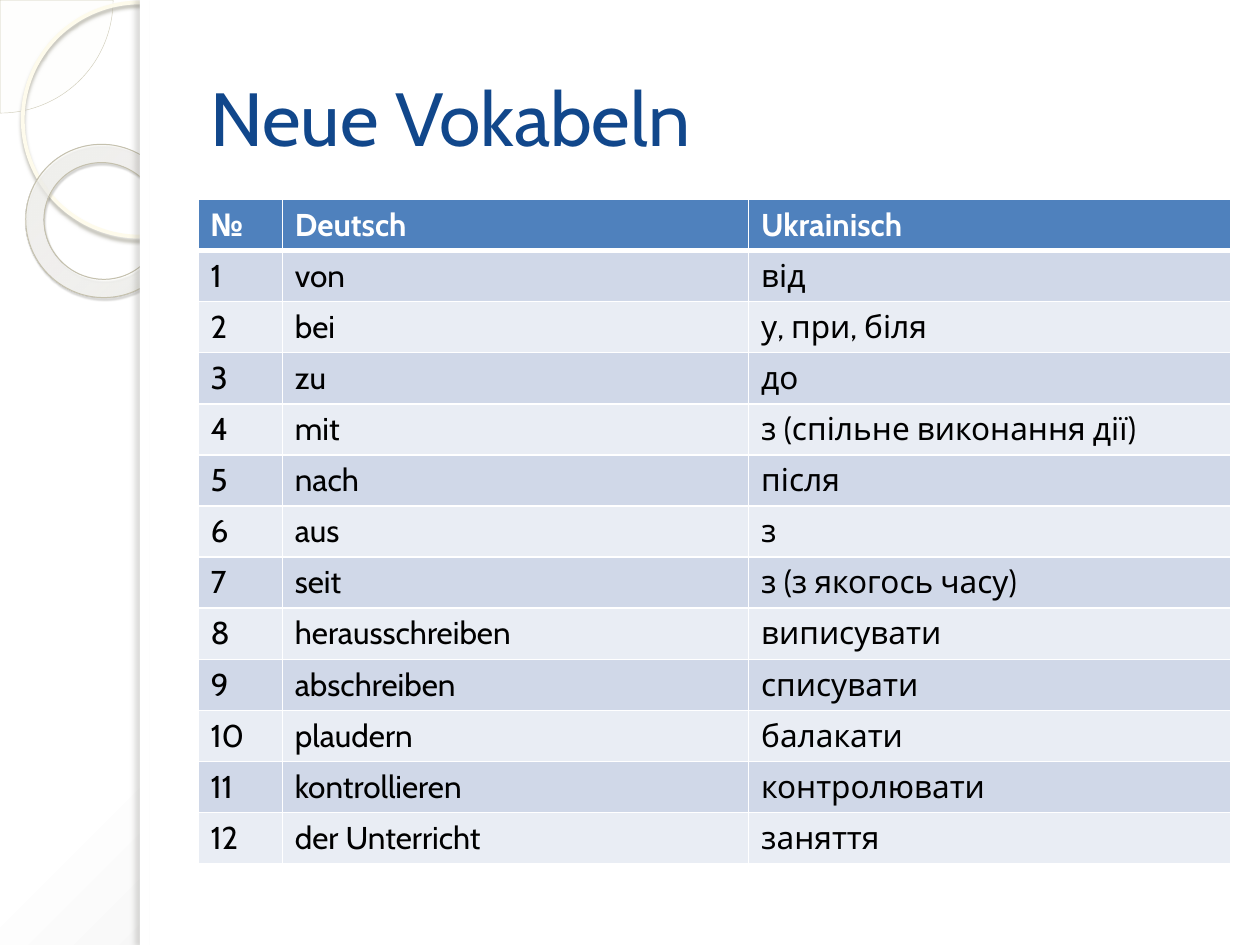
from dataclasses import dataclass

from lxml import etree
from pptx import Presentation
from pptx.dml.color import RGBColor
from pptx.enum.shapes import MSO_SHAPE
from pptx.enum.text import MSO_ANCHOR
from pptx.oxml.ns import qn
from pptx.util import Cm, Pt

PIE, OVAL, DONUT, RECT = (MSO_SHAPE.PIE, MSO_SHAPE.OVAL, MSO_SHAPE.DONUT,
                          MSO_SHAPE.RECTANGLE)
MIDDLE = MSO_ANCHOR.MIDDLE


@dataclass(frozen=True)
class Theme:
    font: str = "Cabin"
    title_size: float = 43
    cell_size: float = 18
    title: str = "11478B"
    white: str = "FFFFFF"
    text: str = "000000"
    header: str = "4F81BD"
    bands: tuple = ("D0D8E8", "E9EDF4")
    page: tuple = ((0, "FFFFFF", 100), (40, "FFFFFF", 100), (100, "C5C5C5", 100))
    pie: str = "FDFDF9"
    pie_line: str = "D1CEBB"
    ring_line: str = "FEFBEC"
    ring_shadow: str = "B2B0A4"
    donut: tuple = ((0, "FEFDFA", 70), (70, "FFFFFC", 55), (100, "E2DBB7", 60))
    donut_line: str = "C5C1AE"
    donut_shadow: str = "5A5850"
    edge_shadow: str = "77756F"


T = Theme()

HEADER = ("№", "Deutsch", "Ukrainisch")
WORDS = (
    ("von", "від"),
    ("bei", "у, при, біля"),
    ("zu", "до"),
    ("mit", "з (спільне виконання дії)"),
    ("nach", "після"),
    ("aus", "з"),
    ("seit", "з (з якогось часу)"),
    ("herausschreiben", "виписувати"),
    ("abschreiben", "списувати"),
    ("plaudern", "балакати"),
    ("kontrollieren", "контролювати"),
    ("der Unterricht", "заняття"),
)
COL_WIDTHS = (1.7, 9.4, 9.73)
ROW_HEIGHT = 1.03


# --- XML helpers ---
def add(parent, tag, **attrs):
    return etree.SubElement(parent, qn(tag), {k: str(v) for k, v in attrs.items()})


def add_color(parent, color, opacity=100):
    clr = add(parent, "a:srgbClr", val=color)
    if opacity < 100:
        add(clr, "a:alpha", val=opacity * 1000)


def circle_gradient(fill, grad, stops, rect):
    """Turn a gradient fill into a circular one with its own stops."""
    fill.gradient()
    for child in list(grad()):
        grad().remove(child)
    stop_list = add(grad(), "a:gsLst")
    for pos, color, opacity in stops:
        add_color(add(stop_list, "a:gs", pos=pos * 1000), color, opacity)
    path = add(grad(), "a:path", path="circle")
    add(path, "a:fillToRect", **{k: v * 1000 for k, v in zip("ltrb", rect)})


def add_shadow(sp, color, opacity, blur, dist, angle):
    effects = sp._element.spPr.find(qn("a:effectLst"))
    shadow = add(effects, "a:outerShdw", blurRad=Pt(blur), dist=Pt(dist),
                 dir=angle * 60000, algn="tl", rotWithShape=0)
    add_color(shadow, color, opacity)


def add_border(cell, side, width):
    ln = add(cell._tc.get_or_add_tcPr(), f"a:ln{side}", w=Pt(width))
    add_color(add(ln, "a:solidFill"), T.white)


# --- Slide elements ---
def add_text(tf, text, size, color, bold=False):
    r = tf.paragraphs[0].add_run()
    r.text = text
    r.font.name, r.font.size, r.font.bold = T.font, Pt(size), bold
    r.font.color.rgb = RGBColor.from_string(color)


def add_figure(s, kind, box, fill=None, opacity=100, line=None, shadow=None, adj=()):
    sp = s.shapes.add_shape(kind, *map(Cm, box))
    sp.shadow.inherit = False
    for i, value in enumerate(adj):
        sp.adjustments[i] = value
    if fill:
        sp.fill.solid()
        sp.fill.fore_color.rgb = RGBColor.from_string(fill)
        if opacity < 100:
            clr = sp._element.spPr.find(qn("a:solidFill"))[0]
            add(clr, "a:alpha", val=opacity * 1000)
    else:
        sp.fill.background()
    if line:
        sp.line.color.rgb = RGBColor.from_string(line[0])
        sp.line.width = Pt(line[1])
    else:
        sp.line.fill.background()
    if shadow:
        add_shadow(sp, *shadow)
    return sp


def add_background(s):
    bg = s.background
    circle_gradient(bg.fill, lambda: s._element.find(".//" + qn("p:bgPr"))[0],
                    T.page, (-24, -20, 124, 120))


def add_decoration(s):
    # Circles in the left margin
    add_figure(s, PIE, (-2.27, -2.27, 4.55, 4.55), T.pie, 33,
               line=(T.pie_line, 0.25), adj=(0, 54))
    add_figure(s, OVAL, (0.46, 0.05, 4.72, 4.72), line=(T.ring_line, 2.15),
               shadow=(T.ring_shadow, 85, 2, 2, 90))
    sp = add_figure(s, DONUT, (0.51, 2.92, 3.12, 3.07), line=(T.donut_line, 0.58),
                    shadow=(T.donut_shadow, 35, 1, 1.2, 75), adj=(0.12,))
    sp.rotation = 38.6
    circle_gradient(sp.fill, lambda: sp._element.spPr.find(qn("a:gradFill")),
                    T.donut, (-408, -50, 508, 150))
    # White page and its shaded left edge
    add_figure(s, RECT, (2.82, 0, 22.58, 19.05), T.white)
    add_figure(s, RECT, (2.82, 0, 0.2, 19.05), T.white,
               shadow=(T.edge_shadow, 25, 3, 3, 180))


def add_title(s, text):
    tf = s.shapes.add_textbox(Cm(3.99), Cm(0.76), Cm(20.83), Cm(3.18)).text_frame
    tf.word_wrap = True
    tf.vertical_anchor = MIDDLE
    add_text(tf, text, T.title_size, T.title)


def add_vocabulary(s):
    rows = [HEADER] + [(str(n), *pair) for n, pair in enumerate(WORDS, 1)]
    table = s.shapes.add_table(len(rows), len(HEADER), Cm(3.99), Cm(4.02),
                               Cm(sum(COL_WIDTHS)), Cm(ROW_HEIGHT * len(rows))).table
    for col, width in zip(table.columns, COL_WIDTHS):
        col.width = Cm(width)
    for i, row in enumerate(rows):
        table.rows[i].height = Cm(ROW_HEIGHT)
        head = i == 0
        fill = T.header if head else T.bands[(i - 1) % 2]
        for j, text in enumerate(row):
            cell = table.cell(i, j)
            # A thick rule parts the header from the words
            for side, width in (("L", 1), ("R", 1), ("T", 3 if i == 1 else 1),
                                ("B", 3 if head else 1)):
                add_border(cell, side, width)
            cell.fill.solid()
            cell.fill.fore_color.rgb = RGBColor.from_string(fill)
            add_text(cell.text_frame, text, T.cell_size,
                     T.white if head else T.text, bold=head)


def main():
    prs = Presentation()
    prs.slide_width, prs.slide_height = Cm(25.4), Cm(19.05)
    s = prs.slides.add_slide(prs.slide_layouts[6])
    add_background(s)
    add_decoration(s)
    add_title(s, "Neue Vokabeln")
    add_vocabulary(s)
    prs.save("out.pptx")


if __name__ == "__main__":
    main()
